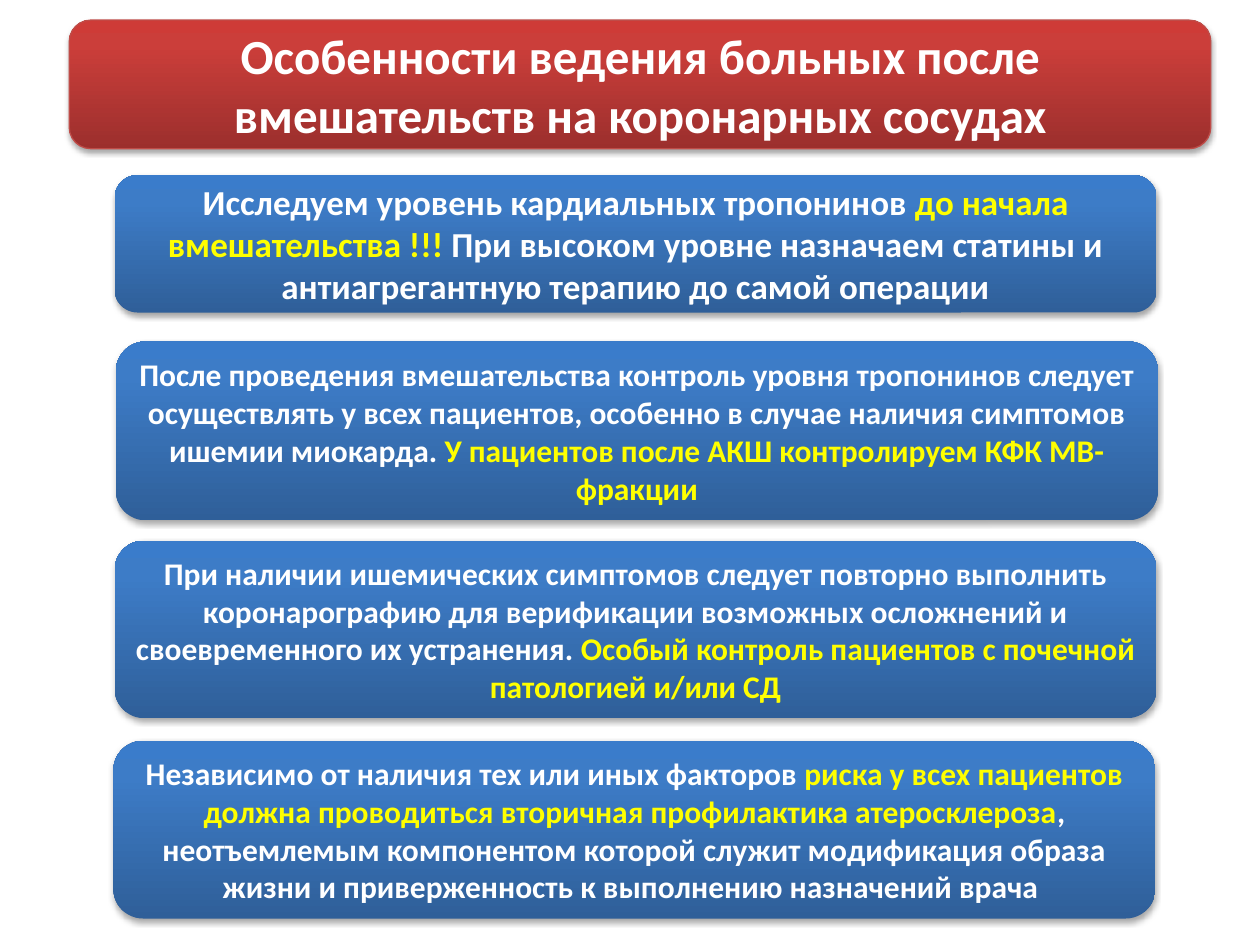
from copy import deepcopy
from dataclasses import dataclass
from typing import Optional

from lxml import etree
from pptx import Presentation
from pptx.dml.color import RGBColor
from pptx.enum import shapes, text
from pptx.oxml.ns import qn
from pptx.util import Inches, Pt


@dataclass(frozen=True)
class Palette:
    """Gradient colours from bottom to top, with an optional outline."""
    stops: tuple[str, str, str]
    outline: Optional[str] = None


@dataclass(frozen=True)
class Theme:
    font: str = "Calibri"
    plain: str = "FFFFFF"
    accent: str = "FFFF00"
    shadow: str = "000000"
    title_size: int = 28
    lead_size: int = 20
    body_size: int = 18
    red: Palette = Palette(("9C2F2D", "CB3E3A", "CE3B37"), "BF4C48")
    blue: Palette = Palette(("2F5F99", "3D7CC7", "3A7CCB"))


THEME = Theme()
STOP_POSITIONS = (0, 0.8, 1)
PANEL_WIDTH = 8.27


@dataclass(frozen=True)
class Panel:
    """A rounded box; its phrases alternate between plain and accent."""
    left: float
    top: float
    width: float
    height: float
    size: int
    phrases: tuple[str, ...]
    palette: Palette = THEME.blue


PANELS = (
    Panel(0.55, 0.16, 9.06, 1.02, THEME.title_size,
          ("Особенности ведения больных после вмешательств на коронарных сосудах",),
          THEME.red),
    Panel(0.91, 1.39, PANEL_WIDTH, 1.09, THEME.lead_size,
          ("Исследуем уровень кардиальных тропонинов ",
           "до начала вмешательства !!! ",
           "При высоком уровне назначаем статины и антиагрегантную терапию "
           "до самой операции")),
    Panel(0.92, 2.71, PANEL_WIDTH, 1.42, THEME.body_size,
          ("После проведения вмешательства контроль уровня тропонинов следует "
           "осуществлять у всех пациентов, особенно в случае наличия симптомов "
           "ишемии миокарда. ",
           "У пациентов после АКШ контролируем КФК МВ-фракции")),
    Panel(0.91, 4.29, PANEL_WIDTH, 1.41, THEME.body_size,
          ("При наличии ишемических симптомов следует повторно выполнить "
           "коронарографию для верификации возможных осложнений и "
           "своевременного их устранения. ",
           "Особый контроль пациентов с почечной патологией и/или СД")),
    Panel(0.9, 5.88, PANEL_WIDTH, 1.41, THEME.body_size,
          ("Независимо от наличия тех или иных факторов ",
           "риска у всех пациентов должна проводиться вторичная профилактика "
           "атеросклероза",
           ", неотъемлемым компонентом которой служит модификация образа жизни "
           "и приверженность к выполнению назначений врача ")),
)


def apply_gradient(shape, palette: Palette) -> None:
    shape.fill.gradient()
    shape.fill.gradient_angle = 90
    stop_list = shape._element.spPr.find(".//" + qn("a:gsLst"))
    stop_list.append(deepcopy(stop_list[-1]))
    for stop, position, color in zip(shape.fill.gradient_stops, STOP_POSITIONS,
                                     palette.stops):
        stop.position = position
        stop.color.rgb = RGBColor.from_string(color)


def apply_outline(shape, palette: Palette) -> None:
    if palette.outline is None:
        shape.line.fill.background()
    else:
        shape.line.color.rgb = RGBColor.from_string(palette.outline)
        shape.line.width = Pt(0.75)


def apply_shadow(shape) -> None:
    shape.shadow.inherit = False
    effects = shape._element.spPr.find(qn("a:effectLst"))
    shadow = etree.SubElement(effects, qn("a:outerShdw"), blurRad=str(Pt(3.1)),
                              dist=str(Pt(1.8)), dir="5400000", rotWithShape="0")
    color = etree.SubElement(shadow, qn("a:srgbClr"), val=THEME.shadow)
    etree.SubElement(color, qn("a:alpha"), val="35000")


def write_text(shape, panel: Panel) -> None:
    frame = shape.text_frame
    frame.word_wrap = True
    frame.vertical_anchor = text.MSO_ANCHOR.MIDDLE
    paragraph = frame.paragraphs[0]
    paragraph.alignment = text.PP_ALIGN.CENTER
    for index, phrase in enumerate(panel.phrases):
        run = paragraph.add_run()
        run.text = phrase
        run.font.name = THEME.font
        run.font.size = Pt(panel.size)
        run.font.bold = True
        color = THEME.accent if index % 2 else THEME.plain
        run.font.color.rgb = RGBColor.from_string(color)


def draw_panel(slide, panel: Panel) -> None:
    shape = slide.shapes.add_shape(
        shapes.MSO_SHAPE.ROUNDED_RECTANGLE, Inches(panel.left), Inches(panel.top),
        Inches(panel.width), Inches(panel.height))
    apply_gradient(shape, panel.palette)
    apply_outline(shape, panel.palette)
    apply_shadow(shape)
    write_text(shape, panel)


def main() -> None:
    presentation = Presentation()
    presentation.slide_width = Inches(10)
    presentation.slide_height = Inches(7.5)
    slide = presentation.slides.add_slide(presentation.slide_layouts[6])
    for panel in PANELS:
        draw_panel(slide, panel)
    presentation.save("out.pptx")


if __name__ == "__main__":
    main()
